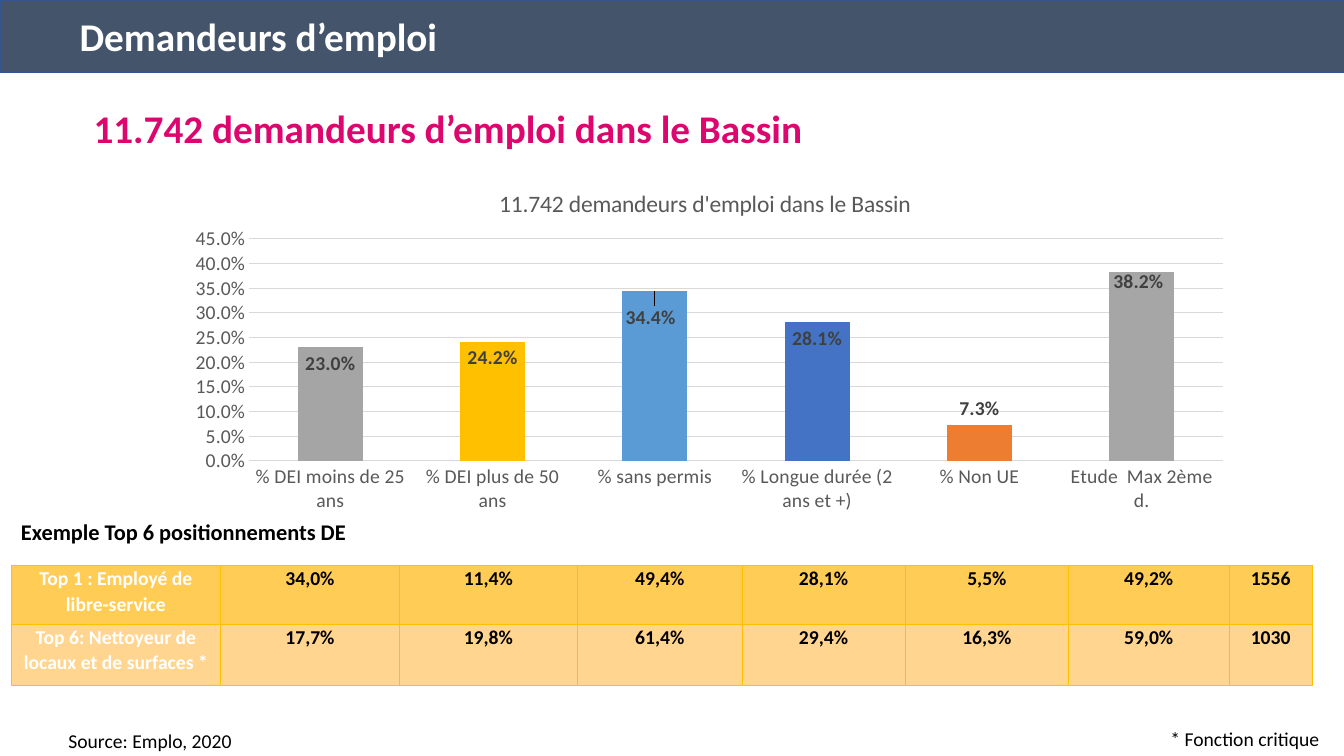
from lxml.etree import SubElement
from pptx import Presentation
from pptx.chart.data import CategoryChartData
from pptx.dml.color import RGBColor
from pptx.enum.chart import XL_CHART_TYPE, XL_LABEL_POSITION, XL_TICK_MARK
from pptx.enum.shapes import MSO_SHAPE
from pptx.enum.text import PP_ALIGN
from pptx.oxml.ns import qn
from pptx.util import Inches, Pt

COLORS = {
    "white": "FFFFFF", "black": "000000", "pink": "DD066F",
    "slate": "44546A", "navy": "325491", "blue": "4472C4",
    "sky": "5B9BD5", "gold": "FFC000", "orange": "ED7D31",
    "gray": "A5A5A5", "silver": "A6A6A6", "grid": "D9D9D9",
    "axis": "595959", "label": "404040",
    "row1": "FFCC55", "row2": "FFD58F",
}

# category, value, bar colour, label offset (fractions of the chart) or None
BARS = [
    ("% DEI moins de 25 ans", 0.23, "gray", None),
    ("% DEI plus de 50 ans", 0.242, "gold", None),
    ("% sans permis", 0.344, "sky", (-0.004, 0.028)),
    ("% Longue durée (2 ans et +)", 0.281, "blue", None),
    ("% Non UE", 0.073, "orange", (0, -0.09)),
    ("Etude  Max 2ème d.", 0.382, "silver", (-0.003, -0.02)),
]
COLUMNS = [2.08, 1.77, 1.77, 1.63, 1.62, 1.62, 1.59, 0.83]
ROWS = [
    (0.58, "row1", ["Top 1 : Employé de libre-service", "34,0%", "11,4%",
                    "49,4%", "28,1%", "5,5%", "49,2%", "1556"]),
    (0.61, "row2", ["Top 6: Nettoyeur de locaux et de surfaces *", "17,7%",
                    "19,8%", "61,4%", "29,4%", "16,3%", "59,0%", "1030"]),
]


def rgb(name):
    return RGBColor.from_string(COLORS[name])


def set_layout(parent, index, **values):
    """Give a chart part a manual layout as its child number index."""
    for old in parent.findall(qn("c:layout")):
        parent.remove(old)
    layout = SubElement(parent, qn("c:layout"))
    parent.insert(index, layout)
    manual = SubElement(layout, qn("c:manualLayout"))
    for tag, value in values.items():
        SubElement(manual, qn(f"c:{tag}")).set("val", str(value))


class Deck:
    def __init__(self, font="Calibri"):
        self.font = font
        self.prs = Presentation()
        self.prs.slide_width = Inches(13.33)
        self.prs.slide_height = Inches(7.5)
        self.s = self.prs.slides.add_slide(self.prs.slide_layouts[6])

    def style(self, font, size, color, bold=False):
        font.name = self.font
        font.size = Pt(size)
        font.bold = bold
        font.color.rgb = rgb(color)

    def run(self, p, text, size, color, bold=False):
        r = p.add_run()
        r.text = text
        self.style(r.font, size, color, bold)

    def text(self, box, text, size, color="black", bold=False):
        sp = self.s.shapes.add_textbox(*map(Inches, box))
        tf = sp.text_frame
        tf.word_wrap = True
        self.run(tf.paragraphs[0], text, size, color, bold)
        return tf.paragraphs[0]

    def band(self, box, fill, line):
        sp = self.s.shapes.add_shape(MSO_SHAPE.RECTANGLE, *map(Inches, box))
        sp.shadow.inherit = False
        sp.fill.solid()
        sp.fill.fore_color.rgb = rgb(fill)
        sp.line.color.rgb = rgb(line)
        sp.line.width = Pt(1)

    def column_chart(self, box, title, bars):
        data = CategoryChartData(number_format="0.0%")
        data.categories = [bar[0] for bar in bars]
        data.add_series("Series 1", [bar[1] for bar in bars])
        chart = self.s.shapes.add_chart(
            XL_CHART_TYPE.COLUMN_STACKED, *map(Inches, box), data).chart
        self.style(chart.font, 14, "black")
        chart.has_legend = False
        chart.has_title = True
        self.run(chart.chart_title.text_frame.paragraphs[0], title, 16.8, "axis")
        set_layout(chart.element.find(".//" + qn("c:title")), 1,
                   xMode="edge", yMode="edge", x=0.3, y=0.05)
        set_layout(chart.element.find(".//" + qn("c:plotArea")), 0,
                   layoutTarget="inner", xMode="edge", yMode="edge",
                   x=0.07, y=0.207, w=0.911, h=0.624)
        self.axes(chart)
        plot = chart.plots[0]
        plot.gap_width, plot.overlap = 150, 100
        plot.vary_by_categories = False
        self.bars(chart, plot.series[0], bars)

    def axes(self, chart):
        for axis in (chart.category_axis, chart.value_axis):
            axis.major_tick_mark = axis.minor_tick_mark = XL_TICK_MARK.NONE
            self.style(axis.tick_labels.font, 14, "axis")
        value_axis = chart.value_axis
        value_axis.minimum_scale, value_axis.maximum_scale = 0, 0.45
        value_axis.major_unit = 0.05
        value_axis.tick_labels.number_format = "0.0%"
        value_axis.tick_labels.number_format_is_linked = False
        value_axis.format.line.fill.background()
        for part in (value_axis.major_gridlines, chart.category_axis):
            part.format.line.color.rgb = rgb("grid")
            part.format.line.width = Pt(0.75)

    def bars(self, chart, series, bars):
        series.format.fill.solid()
        series.format.fill.fore_color.rgb = rgb("blue")
        labels = series.data_labels
        labels.show_value = True
        labels.number_format = "0.0%"
        labels.number_format_is_linked = False
        labels.position = XL_LABEL_POSITION.INSIDE_END
        self.style(labels.font, 14, "label", True)
        for i, (_, _, color, offset) in enumerate(bars):
            point = series.points[i]
            point.format.fill.solid()
            point.format.fill.fore_color.rgb = rgb(color)
            if offset:
                self.style(point.data_label.font, 14, "label", True)
                point.data_label.position = XL_LABEL_POSITION.INSIDE_END
        offsets = [bar[3] for bar in bars if bar[3]]
        for label, (x, y) in zip(chart.element.iter(qn("c:dLbl")), offsets):
            set_layout(label, 1, x=x, y=y)

    def border(self, cell, right_width):
        tc_pr = cell.fill and cell._tc.get_or_add_tcPr()
        for side in "LRTB":
            width = right_width if side == "R" else 0.5
            ln = SubElement(tc_pr, qn(f"a:ln{side}"), w=str(Pt(width)))
            fill = SubElement(ln, qn("a:solidFill"))
            SubElement(fill, qn("a:srgbClr"), val=COLORS["gold"])

    def table(self, box, widths, rows):
        frame = self.s.shapes.add_table(len(rows), len(widths),
                                        *map(Inches, box))
        table = frame.table
        table.first_row = table.horz_banding = False
        for column, width in zip(table.columns, widths):
            column.width = Inches(width)
        for i, (height, fill, texts) in enumerate(rows):
            table.rows[i].height = Inches(height)
            for j, text in enumerate(texts):
                cell = table.cell(i, j)
                cell.margin_left = cell.margin_right = Inches(0.07)
                cell.margin_top = cell.margin_bottom = 0
                self.border(cell, 0.5 if j else 1)
                cell.fill.solid()
                cell.fill.fore_color.rgb = rgb(fill)
                p = cell.text_frame.paragraphs[0]
                p.alignment = PP_ALIGN.CENTER
                p.line_spacing = 1.07
                p.space_after = Pt(8)
                self.run(p, text, 14, "black" if j else "white", True)


def main():
    deck = Deck()
    headline = deck.text((0.83, 1.04, 11.5, 0.6),
                         "11.742 demandeurs d’emploi dans le Bassin",
                         28, "pink", True)
    headline.line_spacing = 0.9
    deck.band((0, 0, 13.33, 0.72), "slate", "navy")
    deck.text((0.69, 0.07, 5.42, 0.57), "Demandeurs d’emploi", 28, "white", True)
    deck.text((0.58, 7.18, 2.3, 0.32), "Source: Emplo, 2020", 14)
    deck.column_chart((1.73, 1.64, 10.6, 3.53),
                      "11.742 demandeurs d'emploi dans le Bassin", BARS)
    deck.table((0.11, 5.61, 12.91, 1.19), COLUMNS, ROWS)
    deck.text((0.11, 5.09, 3.62, 0.37), "Exemple Top 6 positionnements DE",
              16, bold=True)
    deck.text((11.51, 7.16, 1.8, 0.34), "* Fonction critique", 14)
    deck.prs.save("out.pptx")


if __name__ == "__main__":
    main()
